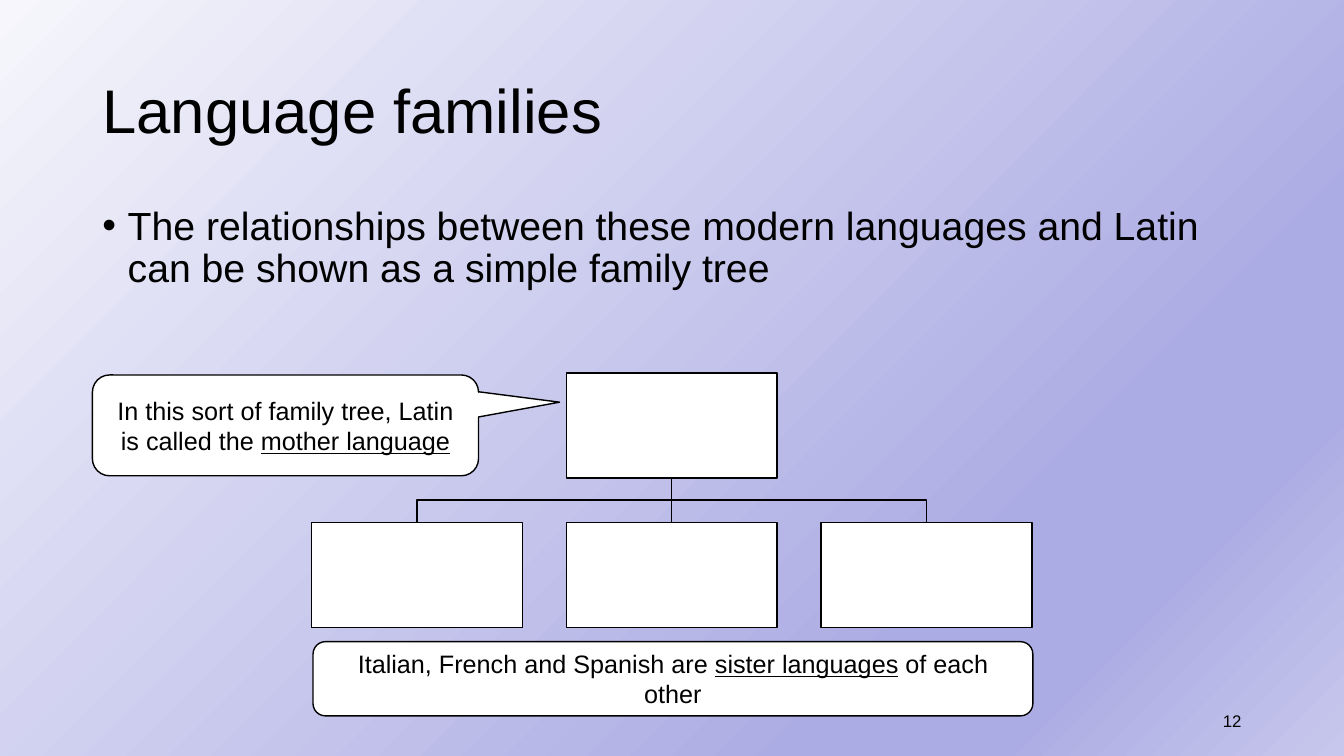
from lxml import etree
from pptx import Presentation
from pptx.dml.color import RGBColor
from pptx.enum.shapes import MSO_CONNECTOR, MSO_SHAPE
from pptx.enum.text import MSO_ANCHOR, PP_ALIGN
from pptx.oxml.ns import qn
from pptx.util import Cm, Pt

RECT = MSO_SHAPE.RECTANGLE
ROUNDED = MSO_SHAPE.ROUNDED_RECTANGLE
CALLOUT = MSO_SHAPE.ROUNDED_RECTANGULAR_CALLOUT
STRAIGHT = MSO_CONNECTOR.STRAIGHT
TOP, MIDDLE = MSO_ANCHOR.TOP, MSO_ANCHOR.MIDDLE
LEFT, CENTER, RIGHT = PP_ALIGN.LEFT, PP_ALIGN.CENTER, PP_ALIGN.RIGHT

BLACK = RGBColor(0x00, 0x00, 0x00)
WHITE = RGBColor(0xFF, 0xFF, 0xFF)
PALE = RGBColor(0xF6, 0xF6, 0xFC)
LAVENDER = RGBColor(0xAC, 0xAC, 0xE4)
LILAC = RGBColor(0xC7, 0xC7, 0xED)
BACKGROUND_STOPS = [(0, PALE), (74, LAVENDER), (83, LAVENDER), (100, LILAC)]


class SlideBuilder:
    font = "Arial"
    line_width = Pt(1)

    def __init__(self, slide):
        self.slide = slide

    def background(self, stops):
        fill = self.slide.background.fill
        fill.gradient()
        fill.gradient_angle = 315
        stop_list = next(self.slide.element.iter(qn("a:gsLst")))
        for old_stop in list(stop_list):
            stop_list.remove(old_stop)
        for percent, color in stops:
            stop = etree.SubElement(stop_list, qn("a:gs"), pos=str(percent * 1000))
            etree.SubElement(stop, qn("a:srgbClr"), val=str(color))

    def add_runs(self, shape, runs, size, align, anchor):
        """Fill a shape with one paragraph of (text, underlined) runs."""
        frame = shape.text_frame
        frame.word_wrap = True
        frame.vertical_anchor = anchor
        paragraph = frame.paragraphs[0]
        paragraph.alignment = align
        for text, underlined in runs:
            run = paragraph.add_run()
            run.text = text
            run.font.name = self.font
            run.font.size = Pt(size)
            run.font.color.rgb = BLACK
            run.font.underline = underlined
        return paragraph

    def text(self, left, top, width, height, text, size, align=LEFT, anchor=MIDDLE):
        box = self.slide.shapes.add_textbox(Cm(left), Cm(top), Cm(width), Cm(height))
        return self.add_runs(box, [(text, False)], size, align, anchor)

    def bullet(self, left, top, width, height, text, size):
        paragraph = self.text(left, top, width, height, text, size, anchor=TOP)
        paragraph.line_spacing = 0.9
        paragraph.space_before = Pt(10)
        properties = paragraph._p.get_or_add_pPr()
        properties.set("marL", str(Cm(0.64)))
        properties.set("indent", str(-Cm(0.64)))
        etree.SubElement(properties, qn("a:buFont"), typeface=self.font)
        etree.SubElement(properties, qn("a:buChar"), char="•")

    def outline(self, shape):
        shape.line.color.rgb = BLACK
        shape.line.width = self.line_width

    def box(self, kind, left, top, width, height, runs=(), adjustments=()):
        shape = self.slide.shapes.add_shape(
            kind, Cm(left), Cm(top), Cm(width), Cm(height))
        shape.shadow.inherit = False
        shape.fill.solid()
        shape.fill.fore_color.rgb = WHITE
        self.outline(shape)
        for index, value in enumerate(adjustments):
            shape.adjustments[index] = value
        if runs:
            self.add_runs(shape, runs, 18, CENTER, MIDDLE)

    def elbow(self, points):
        """Draw an open bent line through the points."""
        start, *rest = [(Cm(x), Cm(y)) for x, y in points]
        builder = self.slide.shapes.build_freeform(*start)
        builder.add_line_segments(rest, close=False)
        branch = builder.convert_to_shape()
        branch.shadow.inherit = False
        branch.fill.background()
        self.outline(branch)

    def straight(self, x1, y1, x2, y2):
        line = self.slide.shapes.add_connector(
            STRAIGHT, Cm(x1), Cm(y1), Cm(x2), Cm(y2))
        self.outline(line)
        etree.SubElement(line._element.spPr, qn("a:effectLst"))


def draw_family_tree(builder):
    width, height = 5.31, 2.65
    center, pitch = 16.93, 6.42
    mother_top, sister_top = 9.4, 13.16
    mother_bottom = mother_top + height
    fork = (mother_bottom + sister_top) / 2

    for side in (1, -1):
        sister = center + side * pitch
        builder.elbow([(center, mother_bottom), (center, fork),
                       (sister, fork), (sister, sister_top)])
    builder.straight(center, mother_bottom, center, sister_top)

    builder.box(RECT, center - width / 2, mother_top, width, height)
    for column in (-1, 0, 1):
        sister = center + column * pitch
        builder.box(RECT, sister - width / 2, sister_top, width, height)


def main():
    deck = Presentation()
    deck.slide_width, deck.slide_height = Cm(33.87), Cm(19.05)
    builder = SlideBuilder(deck.slides.add_slide(deck.slide_layouts[6]))

    builder.background(BACKGROUND_STOPS)
    title = builder.text(2.33, 1.01, 29.21, 3.68, "Language families", 44)
    title.line_spacing = 0.9
    builder.bullet(2.33, 5.07, 29.21, 12.09,
                   "The relationships between these modern languages and Latin "
                   "can be shown as a simple family tree", 28)
    draw_family_tree(builder)
    builder.text(23.92, 17.66, 7.62, 1.01, "12", 12, align=RIGHT)
    builder.box(CALLOUT, 2.33, 9.45, 9.73, 2.54,
                [("In this sort of family tree, Latin is called the ", False),
                 ("mother language", True)],
                adjustments=(0.71, -0.23, 0.17))
    builder.box(ROUNDED, 7.89, 16.17, 18.14, 1.87,
                [("Italian, French and Spanish are ", False),
                 ("sister languages", True),
                 (" of each other", False)])
    deck.save("out.pptx")


if __name__ == "__main__":
    main()
